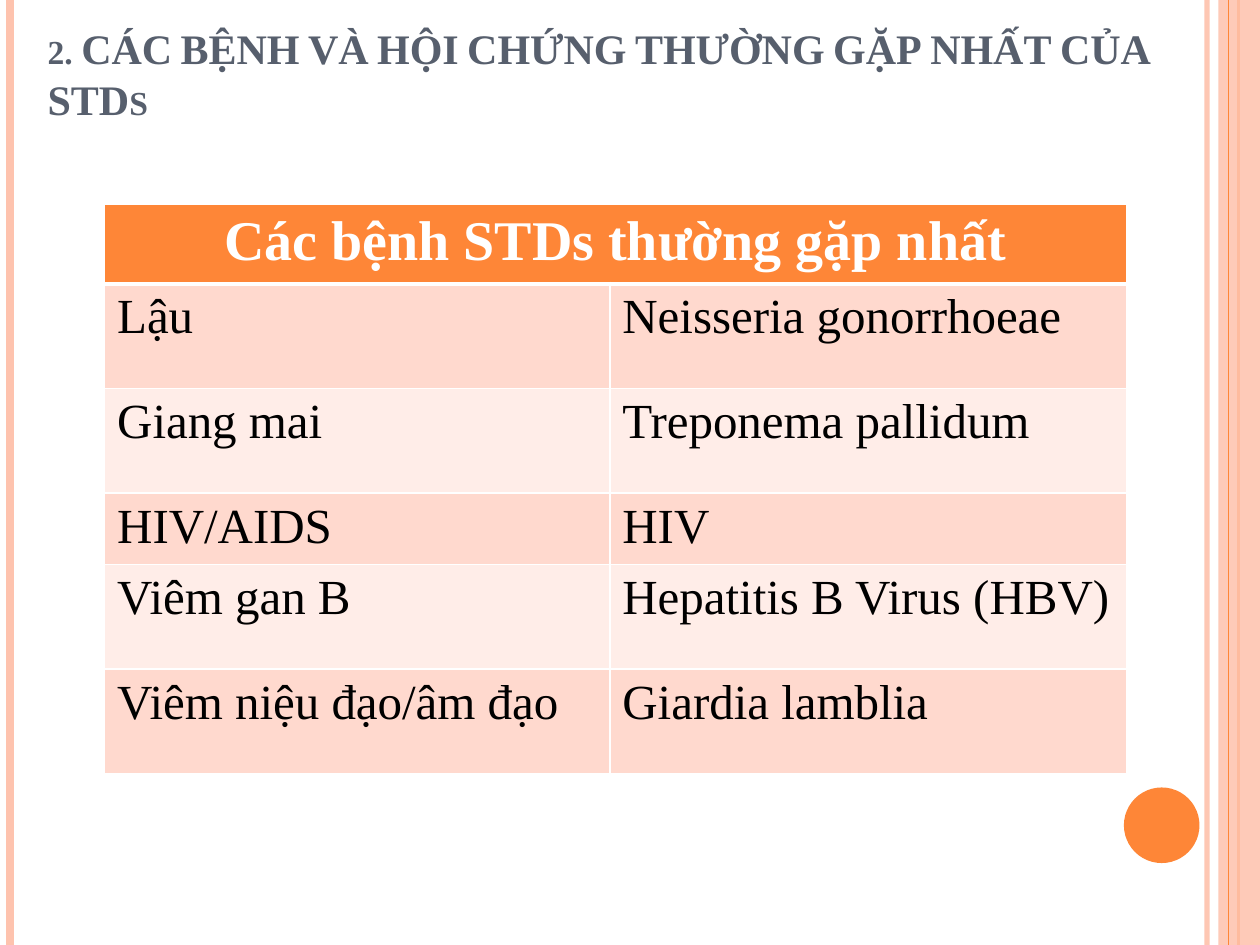
from pptx import Presentation
from pptx.dml.color import RGBColor
from pptx.enum import shapes, text
from pptx.oxml.ns import qn
from pptx.util import Inches, Pt
from lxml import etree

# Content
TITLE = "2. CÁC BỆNH VÀ HỘI CHỨNG THƯỜNG GẶP NHẤT CỦA STDs"
HEAD = "Các bệnh STDs thường gặp nhất"
ROWS = [
    ("Lậu", "Neisseria gonorrhoeae"),
    ("Giang mai", "Treponema pallidum"),
    ("HIV/AIDS", "HIV"),
    ("Viêm gan B", "Hepatitis B Virus (HBV)"),
    ("Viêm niệu đạo/âm đạo", "Giardia lamblia"),
]
WIDTHS = [4.01, 4.1]
HEIGHTS = [0.63, 0.83, 0.83, 0.5, 0.83, 0.83]
ORANGE, PEACH, WHITE = "FE8637", "FEC3AE", "FFFFFF"
BANDS = ["FFD9CE", "FFEDE8"]
FONT = "Times New Roman"


def paint(fmt, hue, alpha=100):
    fmt.solid()
    fmt.fore_color.rgb = RGBColor.from_string(hue)
    if alpha < 100:
        clr = fmt._xPr.find(qn("a:solidFill"))[0]
        etree.SubElement(clr, qn("a:alpha"), val=str(alpha * 1000))


def write(frame, words, size=28, hue="000000", bold=False, center=False, small=False):
    par = frame.paragraphs[0]
    par.alignment = text.PP_ALIGN.CENTER if center else text.PP_ALIGN.LEFT
    run = par.add_run()
    run.text = words
    run.font.name, run.font.size, run.font.bold = FONT, Pt(size), bold
    paint(run.font.fill, hue)
    if small:
        run.font._element.set("cap", "small")


def rule(x, hue, width, alpha=100):
    line = slide.shapes.add_connector(
        shapes.MSO_CONNECTOR.STRAIGHT, Inches(x), 0, Inches(x), Inches(7.5))
    line.line.width = Pt(width)
    paint(line.line.fill, hue, alpha)
    etree.SubElement(line._element.spPr, qn("a:effectLst"))


def block(kind, box, hue, alpha=100):
    shape = slide.shapes.add_shape(kind, *map(Inches, box))
    shape.shadow.inherit = False
    paint(shape.fill, hue, alpha)
    shape.line.fill.background()


def border(cell, base):
    props = cell._tc.get_or_add_tcPr()
    sides = [("L", 1), ("R", 1), ("T", 1), ("B", base)]
    for spot, (side, width) in enumerate(sides):
        edge = etree.Element(qn("a:ln" + side), w=str(Pt(width)))
        fill = etree.SubElement(edge, qn("a:solidFill"))
        etree.SubElement(fill, qn("a:srgbClr"), val=WHITE)
        props.insert(spot, edge)


deck = Presentation()
deck.slide_width, deck.slide_height = Inches(10), Inches(7.5)
slide = deck.slides.add_slide(deck.slide_layouts[6])
paint(slide.background.fill, WHITE)

# Side stripes and disc
rule(9.58, PEACH, 3, 93)
rule(0.08, PEACH, 4.5)
rule(9.83, ORANGE, 1.5)
block(shapes.MSO_SHAPE.RECTANGLE, (9.67, 0, 0.33, 7.5), PEACH, 87)
rule(9.75, ORANGE, 0.75)
block(shapes.MSO_SHAPE.OVAL, (8.92, 6.25, 0.6, 0.6), ORANGE)

# Title
frame = slide.shapes.add_textbox(*map(Inches, (0.28, 0.36, 9.45, 0.67))).text_frame
frame.word_wrap = True
frame.vertical_anchor = text.MSO_ANCHOR.BOTTOM
write(frame, TITLE, size=24, hue="575F6D", bold=True, small=True)

# Table of diseases
table = slide.shapes.add_table(
    len(HEIGHTS), len(WIDTHS), Inches(0.83), Inches(1.62),
    Inches(sum(WIDTHS)), Inches(sum(HEIGHTS))).table
for col, width in zip(table.columns, WIDTHS):
    col.width = Inches(width)
for row, height in zip(table.rows, HEIGHTS):
    row.height = Inches(height)
table.cell(0, 0).merge(table.cell(0, 1))
write(table.cell(0, 0).text_frame, HEAD, size=32, hue=WHITE, bold=True, center=True)
for r, row in enumerate(table.rows):
    for c, cell in enumerate(row.cells):
        paint(cell.fill, BANDS[(r - 1) % 2] if r else ORANGE)
        border(cell, 1 if r else 3)
        if r:
            write(cell.text_frame, ROWS[r - 1][c])

deck.save("out.pptx")
